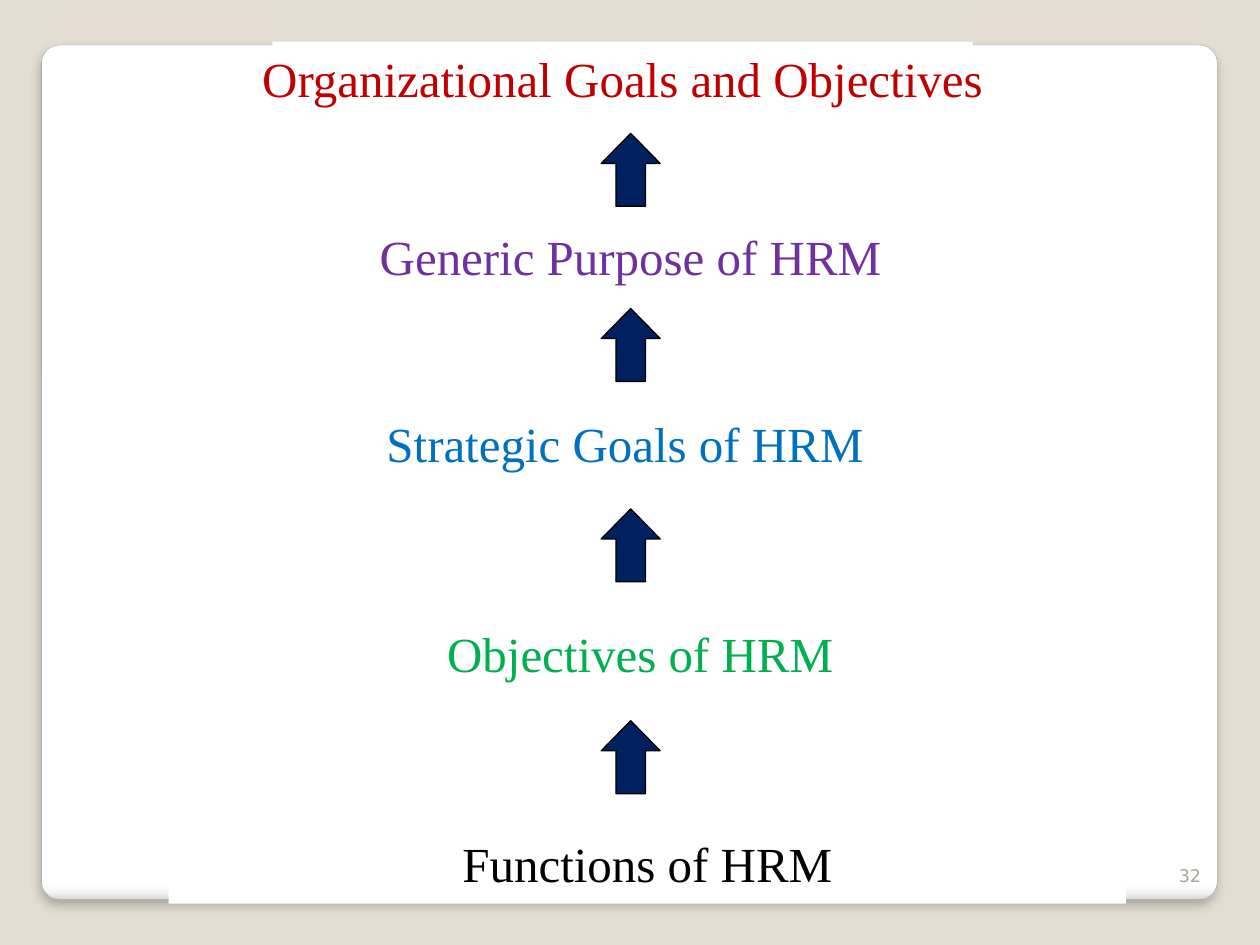
from dataclasses import dataclass

from lxml import etree
from pptx import Presentation
from pptx import util as u
from pptx.dml.color import RGBColor
from pptx.enum import shapes, text
from pptx.oxml import parse_xml
from pptx.oxml.ns import nsdecls, qn

COLORS = {
    "background": "E3DED1", "white": "FFFFFF", "edge": "A4A4A4",
    "number": "A8A49B", "arrow": "002060", "black": "000000",
    "red": "C00000", "purple": "7030A0", "blue": "0070C0", "green": "00B050",
}
CARD_STOPS = ((0, "FFFFFF"), (98, "FFFFFF"), (99, "F7F7F7"), (100, "DADADA"))
ARROW_TOPS = (2.69, 6.22, 10.26, 14.53)


@dataclass(frozen=True)
class Level:
    label: str
    color: str
    left: float
    top: float
    width: float
    height: float


LEVELS = (
    Level("Organizational Goals and Objectives", "red", 5.49, 0.84, 14.12, 1.47),
    Level("Generic Purpose of HRM", "purple", 2.13, 4.47, 21.16, 1.37),
    Level("Strategic Goals of HRM", "blue", 8.08, 8.2, 9.04, 1.45),
    Level("Objectives of HRM", "green", 4.14, 12.42, 17.53, 1.47),
    Level("Functions of HRM", "black", 3.4, 16.59, 19.3, 1.63),
)


def rgb(name: str) -> RGBColor:
    return RGBColor.from_string(COLORS[name])


def write(sp, label: str, size: float, font: str, color: str, align) -> None:
    p = sp.text_frame.paragraphs[0]
    p.text = label
    p.alignment = align
    p.font.size = u.Pt(size)
    p.font.name = font
    p.font.color.rgb = rgb(color)


def add_card(s) -> None:
    sp = s.shapes.add_shape(shapes.MSO_SHAPE.ROUNDED_RECTANGLE,
                            u.Cm(0.84), u.Cm(0.91), u.Cm(23.7), u.Cm(17.22))
    sp.adjustments[0] = 0.021
    sp.line.color.rgb = rgb("edge")
    sp.line.width = u.Pt(0.16)
    sp.shadow.inherit = False
    stops = "".join(f'<a:gs pos="{pos * 1000}"><a:srgbClr val="{color}"/></a:gs>'
                    for pos, color in CARD_STOPS)
    props = sp._element.spPr
    props.find(qn("a:prstGeom")).addnext(parse_xml(
        f'<a:gradFill {nsdecls("a")}><a:gsLst>{stops}</a:gsLst>'
        '<a:lin ang="5400000" scaled="0"/></a:gradFill>'))
    shadow = etree.SubElement(props.find(qn("a:effectLst")), qn("a:outerShdw"),
                              blurRad=str(u.Pt(6)), dist=str(u.Pt(4)),
                              dir="5400000", algn="t", rotWithShape="0")
    color = etree.SubElement(shadow, qn("a:srgbClr"), val=COLORS["black"])
    etree.SubElement(color, qn("a:alpha"), val="25000")


def add_number(s) -> None:
    sp = s.shapes.add_textbox(u.Cm(23.19), u.Cm(16.97), u.Cm(1.27), u.Cm(1.02))
    sp.text_frame.word_wrap = True
    sp.text_frame.vertical_anchor = text.MSO_ANCHOR.BOTTOM
    write(sp, "32", 10, "DejaVu Sans", "number", text.PP_ALIGN.RIGHT)


def add_level(group, level: Level) -> None:
    sp = group.shapes.add_shape(shapes.MSO_SHAPE.RECTANGLE, u.Cm(level.left),
                                u.Cm(level.top), u.Cm(level.width), u.Cm(level.height))
    sp.shadow.inherit = False
    sp.fill.solid()
    sp.fill.fore_color.rgb = rgb("white")
    sp.line.fill.background()
    tf = sp.text_frame
    tf.word_wrap = False
    tf.vertical_anchor = text.MSO_ANCHOR.MIDDLE
    write(sp, level.label, 28, "Times New Roman", level.color, text.PP_ALIGN.CENTER)


def add_arrow(group, top: float) -> None:
    sp = group.shapes.add_shape(shapes.MSO_SHAPE.UP_ARROW,
                                u.Cm(12.12), u.Cm(top), u.Cm(1.19), u.Cm(1.47))
    sp.adjustments[0] = 0.5
    sp.adjustments[1] = 0.51
    sp.shadow.inherit = False
    sp.fill.solid()
    sp.fill.fore_color.rgb = rgb("arrow")
    sp.line.color.rgb = rgb("black")
    sp.line.width = u.Pt(0.75)


def main() -> None:
    """Build the slide on how HRM functions lead up to organizational goals."""
    prs = Presentation()
    prs.slide_width, prs.slide_height = u.Cm(25.4), u.Cm(19.05)
    s = prs.slides.add_slide(prs.slide_layouts[6])
    s.background.fill.solid()
    s.background.fill.fore_color.rgb = rgb("background")
    add_card(s)
    add_number(s)
    group = s.shapes.add_group_shape()
    for level in LEVELS:
        add_level(group, level)
    for top in ARROW_TOPS:
        add_arrow(group, top)
    prs.save("out.pptx")


if __name__ == "__main__":
    main()
